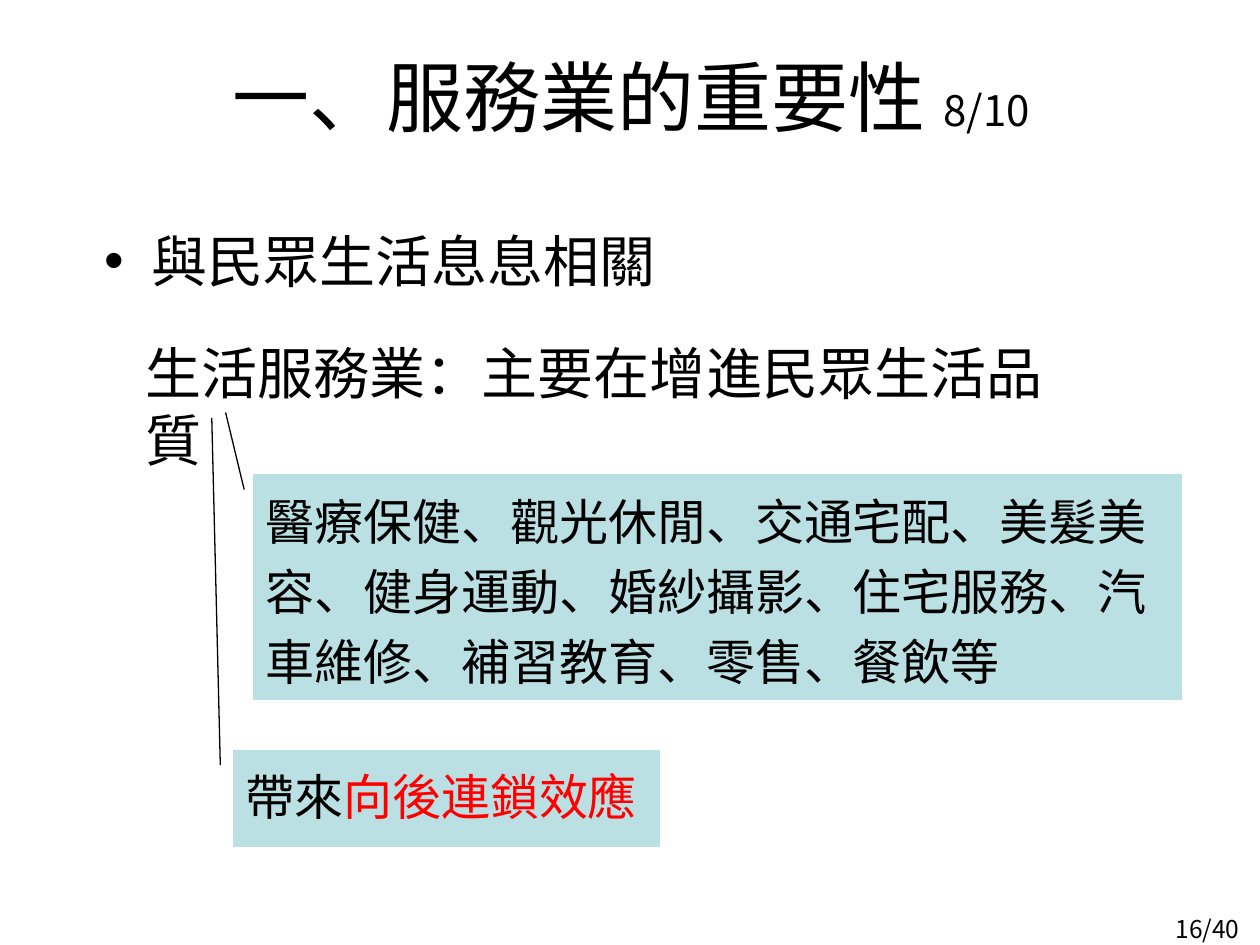
import lxml.etree
import pptx
import pptx.dml.color
import pptx.enum.shapes
import pptx.enum.text
import pptx.oxml.ns
import pptx.util

CJK = "Noto Sans CJK TC"
ALIGN = pptx.enum.text.PP_ALIGN
ANCHOR = pptx.enum.text.MSO_ANCHOR


def color(hex_string):
    """Return the colour for a hex string."""
    return pptx.dml.color.RGBColor.from_string(hex_string)


def add_child(parent, tag, **attributes):
    """Append a drawing element with the given attributes."""
    lxml.etree.SubElement(parent, pptx.oxml.ns.qn(tag), attributes)


def write_text(shape, *runs, latin=CJK, align=ALIGN.LEFT, anchor=ANCHOR.TOP,
               pitch=None, bullet_indent=None):
    """Write (text, size, colour) runs as the one paragraph of a shape."""
    frame = shape.text_frame
    frame.word_wrap = True
    frame.vertical_anchor = anchor
    paragraph = frame.paragraphs[0]
    paragraph.alignment = align
    if pitch:
        paragraph.line_spacing = pptx.util.Pt(pitch)
    if bullet_indent:
        properties = paragraph._p.get_or_add_pPr()
        properties.set("marL", str(bullet_indent))
        properties.set("indent", str(-bullet_indent))
        add_child(properties, "a:buFont", typeface="Arial")
        add_child(properties, "a:buChar", char="•")
    for text, size, hex_string in runs:
        run = paragraph.add_run()
        run.text = text
        run.font.size = pptx.util.Pt(size)
        run.font.color.rgb = color(hex_string)
        run.font.name = latin
        add_child(run._r.get_or_add_rPr(), "a:ea", typeface=CJK)


def add_text(slide, box, *runs, **text_format):
    """Add a text box and write its runs."""
    shape = slide.shapes.add_textbox(*map(pptx.util.Cm, box))
    write_text(shape, *runs, **text_format)


def add_callout(slide, box, pointer, *runs):
    """Add a tinted callout whose pointer is given as shares of its box."""
    shape = slide.shapes.add_shape(
        pptx.enum.shapes.MSO_SHAPE.LINE_CALLOUT_1_NO_BORDER,
        *map(pptx.util.Cm, box))
    for index, share in enumerate(pointer):
        shape.adjustments[index] = share
    shape.shadow.inherit = False
    shape.fill.solid()
    shape.fill.fore_color.rgb = color("BBE0E3")
    shape.line.color.rgb = color("000000")
    shape.line.width = pptx.util.Pt(0.75)
    write_text(shape, *runs, latin="Arial", pitch=40)


def main():
    """Build the slide and save it."""
    presentation = pptx.Presentation()
    presentation.slide_width = pptx.util.Cm(25.4)
    presentation.slide_height = pptx.util.Cm(19.05)
    slide = presentation.slides.add_slide(presentation.slide_layouts[6])

    add_text(slide, (23.11, 18.31, 2.13, 0.81), ("16/40", 14, "000000"),
             align=ALIGN.RIGHT)
    add_text(slide, (1.3, 0.33, 22.86, 3.18),
             ("一、服務業的重要性 ", 44, "000000"), ("8/10", 24, "000000"),
             align=ALIGN.CENTER, anchor=ANCHOR.MIDDLE)
    add_text(slide, (1.85, 4.45, 22.86, 2.46),
             ("與民眾生活息息相關", 32, "000000"),
             bullet_indent=pptx.util.Cm(0.95))
    add_text(slide, (2.69, 6.73, 19.6, 1.6),
             ("生活服務業：主要在增進民眾生活品質", 32, "000000"), pitch=37.8)
    add_callout(slide, (5.11, 9.55, 18.72, 4.57), (0.07, -0.01, -0.27, -0.03),
                ("醫療保健、觀光休閒、交通宅配、美髮美容、健身運動、婚紗攝影、"
                 "住宅服務、汽車維修、補習教育、零售、餐飲等", 28, "000000"))
    add_callout(slide, (4.7, 15.11, 8.61, 1.96), (0.16, -0.03, -3.41, -0.05),
                ("帶來", 28, "000000"), ("向後連鎖效應", 28, "FF0000"))
    presentation.save("out.pptx")


if __name__ == "__main__":
    main()
